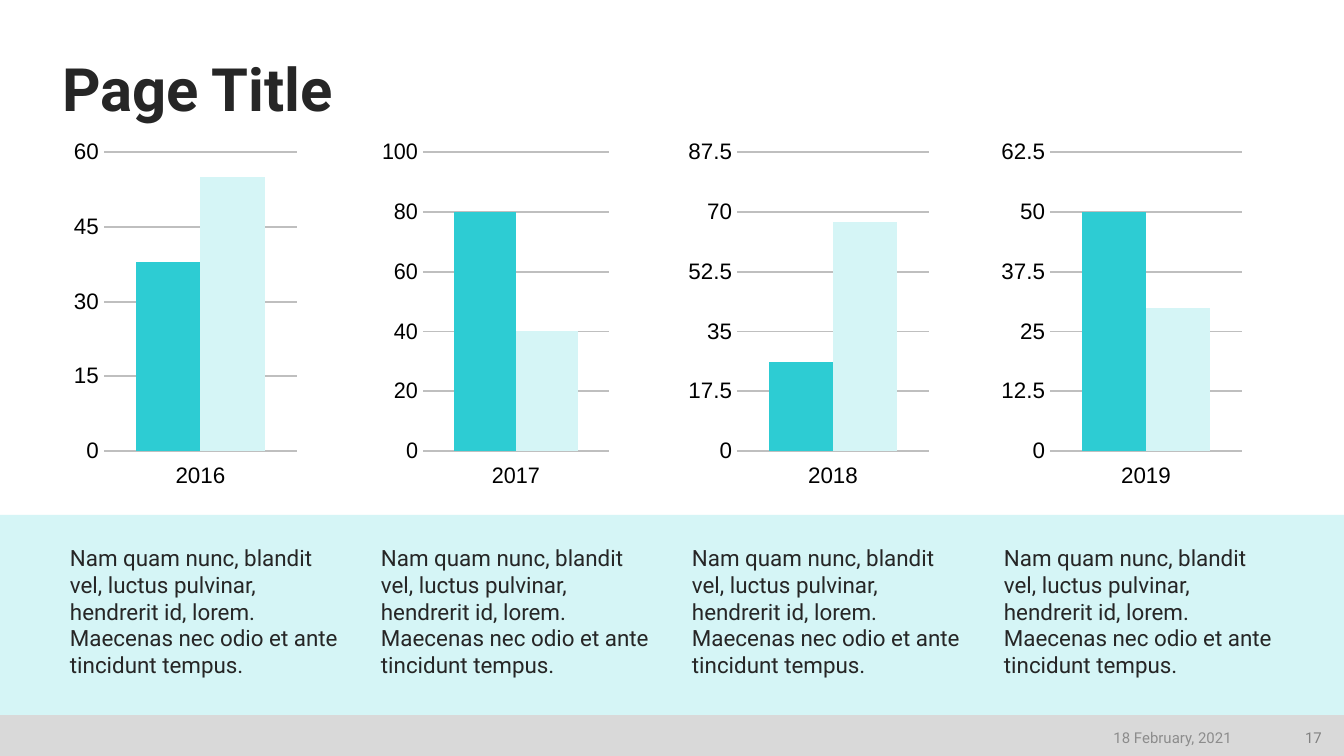
from pptx import Presentation
from pptx.chart.data import CategoryChartData
from pptx.dml.color import RGBColor
from pptx.enum.chart import XL_CHART_TYPE as ChartType
from pptx.enum.chart import XL_TICK_LABEL_POSITION as LabelPos
from pptx.enum.chart import XL_TICK_MARK as Tick
from pptx.enum.shapes import MSO_SHAPE as Shape
from pptx.enum.text import MSO_ANCHOR as Anchor
from pptx.enum.text import PP_ALIGN as Align
from pptx.oxml import parse_xml
from pptx.oxml.ns import nsdecls, qn
from pptx.util import Pt

EMU_PER_PX = 914400 / 134.4
WIDTH, HEIGHT = 1344, 756

TEAL = RGBColor(0x2D, 0xCC, 0xD3)
PALE_TEAL = RGBColor(0xD5, 0xF5, 0xF6)
INK = RGBColor(0x26, 0x26, 0x26)
BLACK = RGBColor(0, 0, 0)
GRID_GRAY = RGBColor(0xBF, 0xBF, 0xBF)
BAR_GRAY = RGBColor(0xD9, 0xD9, 0xD9)
NUMBER_GRAY = RGBColor(0x80, 0x80, 0x80)
DATE_GRAY = RGBColor(0x8C, 0x8C, 0x8C)

BODY = ("Nam quam nunc, blandit vel, luctus pulvinar, hendrerit id, lorem. "
        "Maecenas nec odio et ante tincidunt tempus.")

# year, left, width, values, axis step, axis maximum, plot left and width shares
YEARS = [
    ("2016", 70, 228, (38, 55), 15, 60, (0.15, 0.845)),
    ("2017", 382, 228, (80, 40), 20, 100, (0.15, 0.845)),
    ("2018", 688, 242, (26, 67), 17.5, 87.5, (0.204, 0.791)),
    ("2019", 1001, 242, (50, 30), 12.5, 62.5, (0.204, 0.791)),
]


def px(n):
    return round(n * EMU_PER_PX)


def box(*lengths):
    return [px(n) for n in lengths]


def set_all(target, values):
    for name, value in values.items():
        setattr(target, name, value)


class Deck:
    font = "Roboto"
    axis_font = "Arial"

    def __init__(self):
        self.prs = Presentation()
        self.prs.slide_width, self.prs.slide_height = box(WIDTH, HEIGHT)
        self.s = self.prs.slides.add_slide(self.prs.slide_layouts[6])

    def band(self, top, height, color):
        sp = self.s.shapes.add_shape(Shape.RECTANGLE, *box(0, top, WIDTH, height))
        sp.shadow.inherit = False
        sp.fill.solid()
        sp.fill.fore_color.rgb = color
        sp.line.fill.background()

    def text(self, area, words, size, color, bold=False, anchor=Anchor.TOP,
             align=Align.LEFT, spacing=None, inset=0):
        tf = self.s.shapes.add_textbox(*box(*area)).text_frame
        set_all(tf, {"word_wrap": True, "vertical_anchor": anchor,
                     "margin_left": px(inset), "margin_right": px(inset),
                     "margin_top": 0, "margin_bottom": 0})
        p = tf.paragraphs[0]
        set_all(p, {"alignment": align, "line_spacing": spacing})
        r = p.add_run()
        r.text = words
        self.style(r.font, self.font, size, color, bold)

    def style(self, font, name, size, color, bold=False):
        set_all(font, {"name": name, "size": Pt(size), "bold": bold})
        font.color.rgb = color

    def rule(self, line):
        line.color.rgb = GRID_GRAY
        line.width = Pt(1)

    def chart(self, area, year, values, step, top, plot):
        data = CategoryChartData()
        data.categories = [year]
        for i, value in enumerate(values, 1):
            data.add_series(f"Series {i}", [value])
        chart = self.s.shapes.add_chart(
            ChartType.COLUMN_CLUSTERED, *box(*area), data).chart
        set_all(chart, {"has_legend": False, "has_title": False})
        self.style(chart.font, self.font, 10, BLACK)

        cat, val = chart.category_axis, chart.value_axis
        for axis in (cat, val):
            set_all(axis, {"major_tick_mark": Tick.NONE, "minor_tick_mark": Tick.NONE})
            self.style(axis.tick_labels.font, self.axis_font, 12, BLACK)
        cat.tick_label_position = LabelPos.LOW
        self.rule(cat.format.line)
        set_all(val, {"minimum_scale": 0, "maximum_scale": top, "major_unit": step})
        set_all(val.tick_labels, {"number_format": "General",
                                  "number_format_is_linked": False})
        val.format.line.fill.background()
        self.rule(val.major_gridlines.format.line)

        bars = chart.plots[0]
        set_all(bars, {"gap_width": 100, "overlap": 0, "vary_by_categories": False})
        for series, color in zip(bars.series, (TEAL, PALE_TEAL)):
            series.format.fill.solid()
            series.format.fill.fore_color.rgb = color
        self.place_plot(chart, *plot)

    def place_plot(self, chart, left, width):
        """Fix the inner plot area, in shares of the chart frame."""
        places = {"x": left, "y": 0.076, "w": width, "h": 0.806}
        items = "".join(f'<c:{k} val="{v}"/>' for k, v in places.items())
        area = chart.element.find(f".//{qn('c:plotArea')}")
        for old in area.findall(qn("c:layout")):
            area.remove(old)
        area.insert(0, parse_xml(
            f'<c:layout {nsdecls("c")}><c:manualLayout><c:layoutTarget val="inner"/>'
            f'<c:xMode val="edge"/><c:yMode val="edge"/>{items}'
            "</c:manualLayout></c:layout>"))


def main():
    deck = Deck()
    deck.band(715, 41, BAR_GRAY)
    deck.text((62, 54, 1223, 70), "Page Title", 32, INK, bold=True,
              anchor=Anchor.BOTTOM, spacing=0.9)
    for year, left, width, values, step, top, plot in YEARS:
        deck.chart((left, 124, width, 371), year, values, step, top, plot)
    deck.band(515, 200, PALE_TEAL)
    for i in range(len(YEARS)):
        deck.text((70 + 934 * i // 3, 544, 280, 149), BODY, 12, INK)
    footer = {"anchor": Anchor.MIDDLE, "align": Align.RIGHT, "inset": 13}
    deck.text((1275, 720, 60, 35), "17", 8, NUMBER_GRAY, **footer)
    deck.text((943, 720, 302, 35), "18 February, 2021", 8, DATE_GRAY, **footer)
    deck.prs.save("out.pptx")


if __name__ == "__main__":
    main()
